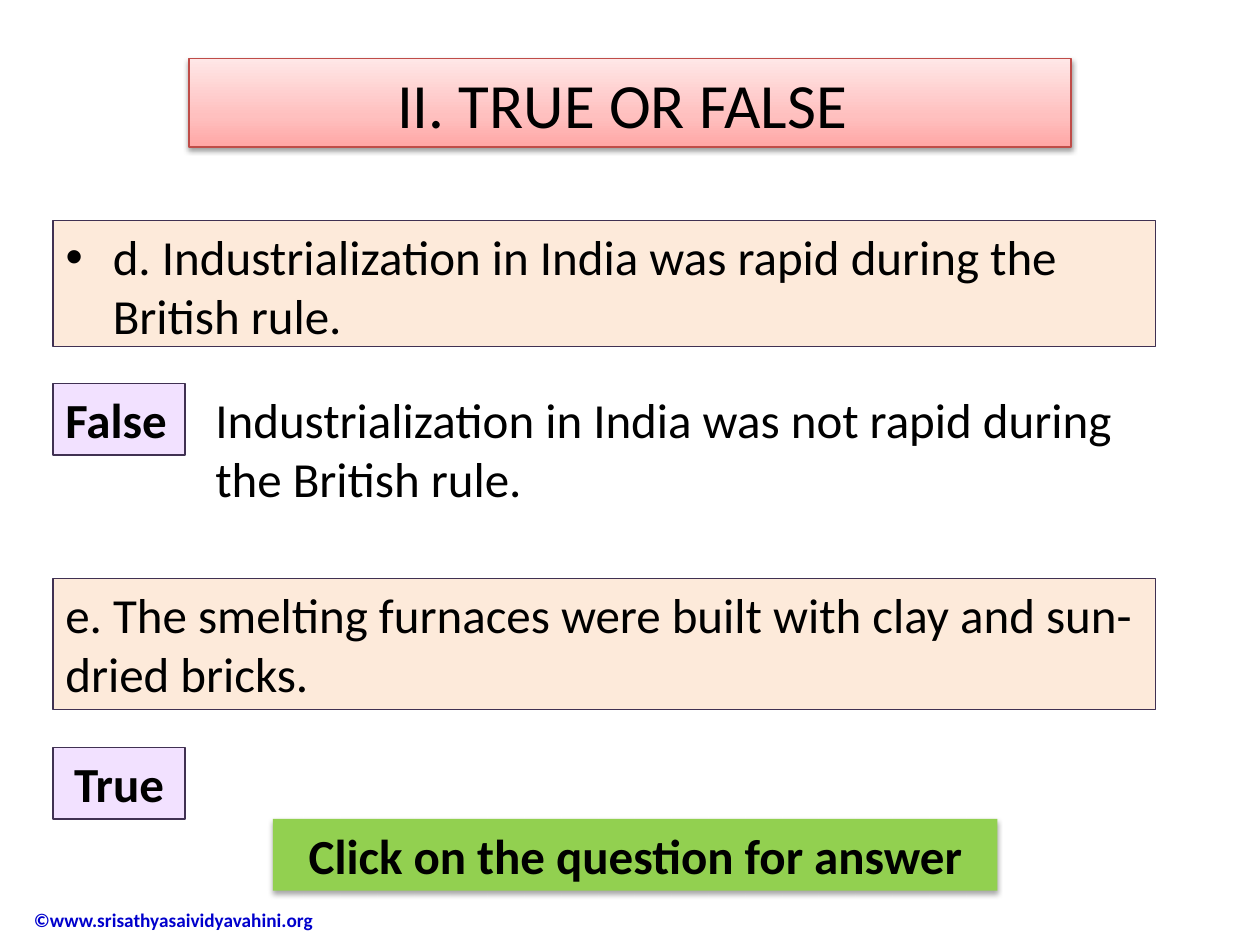
from dataclasses import dataclass

from lxml.etree import SubElement
from pptx import Presentation
from pptx.dml.color import RGBColor
from pptx.enum.text import MSO_ANCHOR, MSO_AUTO_SIZE, PP_ALIGN
from pptx.oxml import parse_xml
from pptx.oxml.ns import nsdecls, qn
from pptx.util import Pt


@dataclass(frozen=True)
class Theme:
    font: str = "Calibri"
    title_size: float = 36
    text_size: float = 28
    footer_size: float = 11
    text: str = "000000"
    footer: str = "0000CC"
    question: str = "FDEADA"
    answer: str = "F2E1FF"
    border: str = "403152"
    button: str = "92D050"
    title_border: str = "BF4C48"
    title_stops: tuple = ((0, "FFA6A5"), (35, "FFC0BF"), (100, "FFE7E7"))


theme = Theme()


def style(sp, box, text, size=theme.text_size, bold=False, color=theme.text,
          align=PP_ALIGN.LEFT, anchor=MSO_ANCHOR.TOP, fill=None, line=None):
    """Place a shape, set its text and format both."""
    sp.left, sp.top, sp.width, sp.height = map(Pt, box)
    if fill:
        sp.fill.solid()
        sp.fill.fore_color.rgb = RGBColor.from_string(fill)
    if line:
        sp.line.color.rgb = RGBColor.from_string(line)
        sp.line.width = Pt(0.75)
    tf = sp.text_frame
    tf.text = text
    tf.word_wrap = True
    tf.auto_size = MSO_AUTO_SIZE.NONE
    tf.vertical_anchor = anchor
    p = tf.paragraphs[0]
    p.alignment = align
    p.space_before = Pt(0)
    font = p.runs[0].font
    font.name, font.size, font.bold = theme.font, Pt(size), bold
    font.color.rgb = RGBColor.from_string(color)


def add_shadow(sp, opacity, distance):
    """Cast a soft shadow straight down."""
    sp.shadow.inherit = False
    effects = sp._element.spPr.find(qn("a:effectLst"))
    shadow = SubElement(effects, qn("a:outerShdw"), blurRad=str(Pt(3.1)),
                        dist=str(Pt(distance)), dir="5400000", rotWithShape="0")
    color = SubElement(shadow, qn("a:srgbClr"), val="000000")
    SubElement(color, qn("a:alpha"), val=str(opacity * 1000))


prs = Presentation()
prs.slide_width, prs.slide_height = Pt(720), Pt(540)
s = prs.slides.add_slide(prs.slide_layouts[1])

# Shared columns
left, width = 30.25, 630
label_width, label_height = 75.5, 41

# Website line
style(s.shapes.add_textbox(0, 0, 0, 0), (12.25, 511, 185, 29.5),
      "©www.srisathyasaividyavahini.org", size=theme.footer_size, bold=True,
      color=theme.footer, anchor=MSO_ANCHOR.MIDDLE)

# Title with gradient
title = s.shapes.title
style(title, (108, 33.5, 504, 50.5), "II. TRUE OR FALSE", size=theme.title_size,
      align=PP_ALIGN.CENTER, anchor=MSO_ANCHOR.MIDDLE, line=theme.title_border)
title.text_frame.margin_right = Pt(16)
title.fill.gradient()
title.fill.gradient_angle = 90
stops = "".join(f'<a:gs pos="{pos * 1000}"><a:srgbClr val="{rgb}"/></a:gs>'
                for pos, rgb in theme.title_stops)
gradient = title._element.spPr.find(qn("a:gradFill"))
gradient.replace(gradient.find(qn("a:gsLst")),
                 parse_xml(f'<a:gsLst {nsdecls("a")}>{stops}</a:gsLst>'))
add_shadow(title, 38, 1.6)

# Questions: the first is the body placeholder
body = s.placeholders[1]
pPr = body.text_frame.paragraphs[0]._p.get_or_add_pPr()
pPr.set("marL", "0")
pPr.set("indent", "0")
SubElement(pPr, qn("a:buNone"))
questions = (
    (body, 126, 72, "d. Industrialization in India was rapid during the British rule."),
    (s.shapes.add_textbox(0, 0, 0, 0), 330.5, 75,
     "e. The smelting furnaces were built with clay and sun-dried bricks."),
)
for sp, top, height, text in questions:
    style(sp, (left, top, width, height), text, fill=theme.question, line=theme.border)

# Answer labels
for top, text, align in ((219, "False", PP_ALIGN.LEFT), (427, "True", PP_ALIGN.CENTER)):
    style(s.shapes.add_textbox(0, 0, 0, 0), (left, top, label_width, label_height),
          text, bold=True, align=align, fill=theme.answer, line=theme.border)

# Corrected statement
style(s.shapes.add_textbox(0, 0, 0, 0), (116, 219, 544.25, 75),
      "Industrialization in India was not rapid during the British rule.")

# Instruction button
button = s.shapes.add_textbox(0, 0, 0, 0)
style(button, (156, 468, 414, label_height), "Click on the question for answer",
      bold=True, align=PP_ALIGN.CENTER, fill=theme.button)
add_shadow(button, 35, 1.8)

prs.save("out.pptx")
